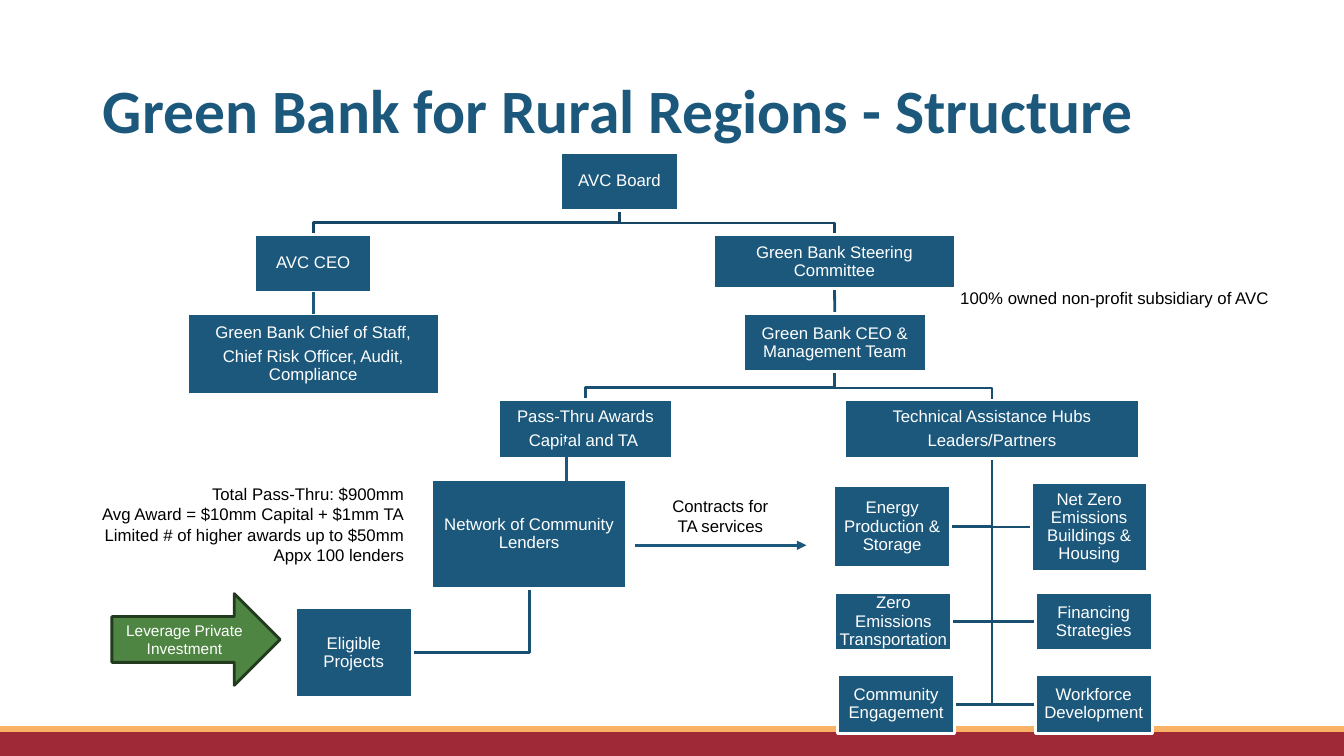
from lxml import etree
from pptx import Presentation
from pptx import util as u
from pptx.dml import color
from pptx.enum import shapes, text
from pptx.oxml import ns

COLORS = {
    "blue": "1B587C",
    "tree": "195071",
    "top": "164663",
    "green": "4E8542",
    "edge": "223A1D",
    "red": "9F2936",
    "gold": "F9B266",
    "white": "FFFFFF",
    "black": "000000",
}
ALIGN = text.PP_ALIGN


def rgb(name):
    return color.RGBColor.from_string(COLORS[name])


def place(box, x, y, w, h):
    return [u.Cm(v) for v in (box[0] + x, box[1] + y, w, h)]


def write(tf, words, size=12, fill="black", font="Arial", bold=False,
          align=ALIGN.LEFT, spacing=None, gap=0, anchor=text.MSO_ANCHOR.TOP,
          margin=None):
    tf.word_wrap = True
    tf.vertical_anchor = anchor
    if margin is not None:
        tf.margin_left = tf.margin_right = u.Cm(margin)
        tf.margin_top = tf.margin_bottom = u.Cm(margin)
    for i, line in enumerate(words.split("\n")):
        p = tf.add_paragraph() if i else tf.paragraphs[0]
        p.alignment = align
        if spacing:
            p.line_spacing = spacing
        if i and gap:
            p.space_before = u.Pt(gap)
        r = p.add_run()
        r.text = line
        r.font.size = u.Pt(size)
        r.font.name = font
        r.font.bold = bold
        r.font.color.rgb = rgb(fill)


def add_block(s, kind, at, fill, line, width=2):
    sp = s.shapes.add_shape(kind, *at)
    sp.shadow.inherit = False
    sp.fill.solid()
    sp.fill.fore_color.rgb = rgb(fill)
    sp.line.color.rgb = rgb(line)
    sp.line.width = u.Pt(width)
    return sp


def add_node(s, box, words, *at):
    sp = add_block(s, shapes.MSO_SHAPE.RECTANGLE, place(box, *at), "blue", "white")
    write(sp.text_frame, words, fill="white", align=ALIGN.CENTER, spacing=0.9,
          gap=4.2, anchor=text.MSO_ANCHOR.MIDDLE, margin=0.03)
    return sp


def add_note(s, box, words, *at, align=ALIGN.LEFT):
    tb = s.shapes.add_textbox(*place(box, *at))
    write(tb.text_frame, words, align=align)


def send_back(s, sp):
    s.shapes[0].element.addprevious(sp.element)


def add_line(s, x1, y1, x2, y2, line="blue", width=2.25, arrow=False):
    c = s.shapes.add_connector(shapes.MSO_CONNECTOR.STRAIGHT, x1, y1, x2, y2)
    c.line.color.rgb = rgb(line)
    c.line.width = u.Pt(width)
    if arrow:
        tail = etree.SubElement(c.line._get_or_add_ln(), ns.qn("a:tailEnd"))
        tail.set("type", "triangle")
    etree.SubElement(c.element.spPr, ns.qn("a:effectLst"))
    return c


def join_down(s, upper, lower, **style):
    c = add_line(s, 0, 0, 0, 0, **style)
    c.begin_connect(upper, 2)
    c.end_connect(lower, 0)
    return c


def add_elbow(s, points, line="tree"):
    fb = s.shapes.build_freeform(*points[0])
    fb.add_line_segments(points[1:], close=False)
    sp = fb.convert_to_shape()
    sp.shadow.inherit = False
    sp.fill.background()
    sp.line.color.rgb = rgb(line)
    sp.line.width = u.Pt(2)
    send_back(s, sp)


def bottom_middle(sp):
    return sp.left + sp.width // 2, sp.top + sp.height


def branch_to_top(s, parent, child, line="tree"):
    x, y = bottom_middle(parent)
    child_x = child.left + child.width // 2
    bend = child.top - u.Cm(0.3)
    add_elbow(s, [(x, y), (x, bend), (child_x, bend), (child_x, child.top)], line)


def branch_to_side(s, parent, child):
    x, y = bottom_middle(parent)
    middle = child.top + child.height // 2
    edge = child.left if child.left > x else child.left + child.width
    add_elbow(s, [(x, y), (x, middle), (edge, middle)])


def add_title(s, box):
    sp = s.shapes.title
    sp.left, sp.top, sp.width, sp.height = place(box, 0, 0, *box[2:])
    write(sp.text_frame, "Green Bank for Rural Regions - Structure", size=44,
          fill="blue", font="Calibri", bold=True, spacing=0.9,
          anchor=text.MSO_ANCHOR.MIDDLE)


def add_footer(s, box):
    for name, y, h in (("red", 0.1, box[3] - 0.1), ("gold", 0, 0.13)):
        add_block(s, shapes.MSO_SHAPE.RECTANGLE, place(box, 0, y, box[2], h),
                  name, name, 1)


def add_governance(s, box):
    board = add_node(s, box, "AVC Board", 9.42, 0, 2.95, 1.47)
    ceo = add_node(s, box, "AVC CEO", 1.7, 2.06, 2.95, 1.47)
    staff = add_node(s, box, "Green Bank Chief of Staff,\n"
                     "Chief Risk Officer, Audit, Compliance", 0, 4.06, 6.35, 2.03)
    steering = add_node(s, box, "Green Bank Steering Committee",
                        13.26, 2.08, 6.1, 1.35)
    management = add_node(s, box, "Green Bank CEO & Management Team",
                          14.02, 4.06, 4.6, 1.47)
    for child in (ceo, steering):
        branch_to_top(s, board, child, "top")
    send_back(s, join_down(s, steering, management, line="tree", width=2))
    join_down(s, ceo, staff)
    add_note(s, box, "100% owned non-profit subsidiary of AVC",
             19.23, 3.28, 8.36, 0.76)
    return management


def add_lending(s, box):
    awards = add_node(s, box, "Pass-Thru Awards\nCapital and TA ",
                      10.49, 0, 4.37, 1.5)
    network = add_node(s, box, "Network of Community Lenders",
                       8.79, 2.03, 4.93, 2.74)
    projects = add_node(s, box, "Eligible Projects", 5.36, 5.26, 2.95, 2.26)
    branch_to_side(s, network, projects)
    add_note(s, box, "Total Pass-Thru: $900mm\n"
             "Avg Award = $10mm Capital + $1mm TA\n"
             "Limited # of higher awards up to $50mm\n"
             "Appx 100 lenders", 0, 2.01, 8.36, 2.31, align=ALIGN.RIGHT)
    add_note(s, box, "Contracts for TA services", 14.35, 2.31, 3.45, 1.27,
             align=ALIGN.CENTER)
    leverage = add_block(s, shapes.MSO_SHAPE.RIGHT_ARROW,
                         place(box, 0.74, 4.9, 4.24, 2.31), "green", "edge")
    write(leverage.text_frame, "Leverage Private Investment", size=11,
          fill="white", align=ALIGN.CENTER, anchor=text.MSO_ANCHOR.MIDDLE)
    add_line(s, *place(box, 13.92, 3.68, box[0] + 18.24, box[1] + 3.68), arrow=True)
    add_line(s, *place(box, 12.19, 1.09, box[0] + 12.19, box[1] + 2.31))
    return awards


def add_hubs(s, box):
    hub = add_node(s, box, "Technical Assistance Hubs\nLeaders/Partners",
                   0.28, 0, 7.42, 1.47)
    for words, *at in (
        ("Energy Production & Storage", 0, 2.16, 2.95, 2.06),
        ("Net Zero Emissions Buildings & Housing", 4.98, 2.08, 2.92, 2.24),
        ("Zero Emissions Transportation", 0.03, 4.85, 2.95, 1.47),
        ("Financing Strategies", 5.08, 4.85, 2.95, 1.47),
        ("Community Engagement", 0.1, 6.93, 2.95, 1.47),
        ("Workforce Development", 5.08, 6.93, 2.95, 1.47),
    ):
        branch_to_side(s, hub, add_node(s, box, words, *at))
    return hub


def main():
    prs = Presentation()
    prs.slide_width, prs.slide_height = u.Cm(33.87), u.Cm(19.05)
    s = prs.slides.add_slide(prs.slide_layouts[5])
    add_title(s, (2.34, 1.02, 29.21, 3.68))
    add_footer(s, (0, 18.31, 33.87, 0.74))
    management = add_governance(s, (4.72, 3.84, 19.35, 6.1))
    awards = add_lending(s, (2.08, 10.06, 18.24, 7.52))
    hub = add_hubs(s, (21.01, 10.08, 8.03, 8.41))
    for child in (awards, hub):
        branch_to_top(s, management, child)
    prs.save("out.pptx")


if __name__ == "__main__":
    main()
